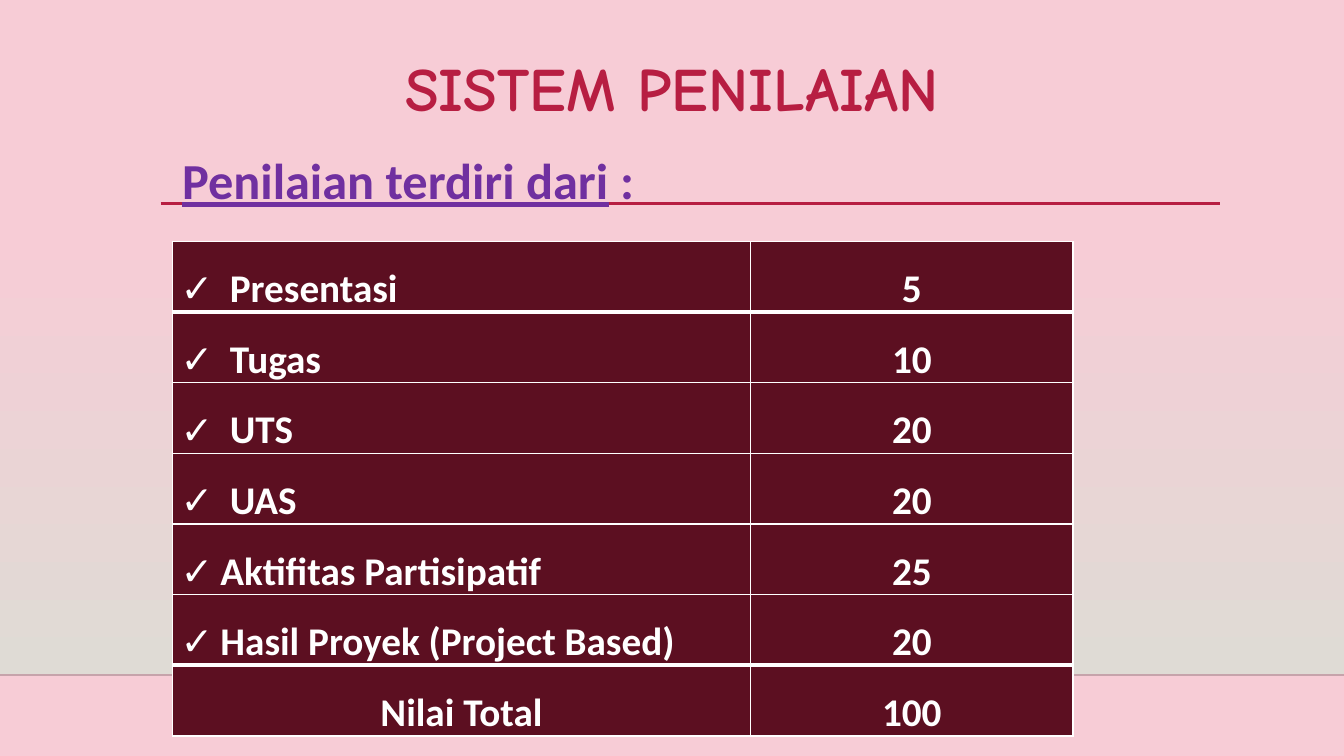
import dataclasses

import lxml.etree
import pptx
import pptx.dml.color
import pptx.enum.shapes
import pptx.enum.text
import pptx.oxml.ns
import pptx.util

PIXEL = 9525


@dataclasses.dataclass(frozen=True)
class Theme:
    """Colours, fonts and type sizes of the slide."""
    pink: str = "F7CCD6"
    grey: str = "DFDBD5"
    floor: str = "C6A3AB"
    red: str = "B71E42"
    purple: str = "7030A0"
    wine: str = "5C0F21"
    white: str = "FFFFFF"
    title_font: str = "Comic Neue"
    body_font: str = "Calibri"
    title_size: int = 44
    lead_size: int = 36
    table_size: int = 28


@dataclasses.dataclass(frozen=True)
class Box:
    """A rectangle in px."""
    left: int
    top: int
    width: int
    height: int

    def lengths(self):
        """Return the four lengths in EMU."""
        return [value * PIXEL for value in dataclasses.astuple(self)]


THEME = Theme()
PAGE = Box(0, 0, 1280, 720)
SCORES = [
    ("Presentasi", 5, 55),
    ("Tugas", 10, 55),
    ("UTS", 20, 55),
    ("UAS", 20, 55),
    ("Aktifitas Partisipatif", 25, 46),
    ("Hasil Proyek (Project Based)", 20, 46),
]


def rgb(value):
    """Turn a hex string into a colour."""
    return pptx.dml.color.RGBColor.from_string(value)


def add_text(para, text, size, color, font=THEME.body_font, align=None,
             spacing=None, underline=None):
    """Add a bold run to a paragraph and format both."""
    if align is not None:
        para.alignment = align
    if spacing is not None:
        para.line_spacing = spacing
    span = para.add_run()
    span.text = text
    span.font.size = pptx.util.Pt(size)
    span.font.name = font
    span.font.bold = True
    span.font.underline = underline
    span.font.color.rgb = rgb(color)


def add_rule(page, left, right, top, color, weight):
    """Draw a horizontal line without a shadow."""
    rule = page.shapes.add_connector(
        pptx.enum.shapes.MSO_CONNECTOR.STRAIGHT,
        left * PIXEL, top * PIXEL, right * PIXEL, top * PIXEL)
    rule.line.color.rgb = rgb(color)
    rule.line.width = pptx.util.Pt(weight)
    lxml.etree.SubElement(rule._element.spPr, pptx.oxml.ns.qn("a:effectLst"))


def add_backdrop(page, box):
    """Fill the page, and fade the given band down to its floor line."""
    page.background.fill.solid()
    page.background.fill.fore_color.rgb = rgb(THEME.pink)
    band = page.shapes.add_shape(
        pptx.enum.shapes.MSO_SHAPE.RECTANGLE, *box.lengths())
    band.shadow.inherit = False
    band.line.fill.background()
    band.fill.gradient()
    band.fill.gradient_angle = 270
    for stop, color in zip(band.fill.gradient_stops, (THEME.pink, THEME.grey)):
        stop.color.rgb = rgb(color)
    add_rule(page, box.left, box.left + box.width, box.top + box.height,
             THEME.floor, 1)


def add_title(page, box):
    """Place and format the title."""
    title = page.shapes.title
    title.left, title.top, title.width, title.height = box.lengths()
    title.text_frame.vertical_anchor = pptx.enum.text.MSO_ANCHOR.MIDDLE
    add_text(title.text_frame.paragraphs[0], "SISTEM PENILAIAN",
             THEME.title_size, THEME.red, font=THEME.title_font,
             align=pptx.enum.text.PP_ALIGN.CENTER, spacing=0.9)


def add_lead(page, box):
    """Place the lead sentence over its rule."""
    add_rule(page, box.left - 11, box.left + 998, box.top + 68, THEME.red, 2.5)
    frame = page.shapes.add_textbox(*box.lengths()).text_frame
    frame.word_wrap = True
    para = frame.paragraphs[0]
    add_text(para, "Penilaian terdiri dari", THEME.lead_size, THEME.purple,
             spacing=1.2, underline=True)
    add_text(para, " :", THEME.lead_size, THEME.purple)


def add_check(para, indent, margin=8):
    """Give a paragraph a check mark as its bullet."""
    properties = para._p.get_or_add_pPr()
    properties.set("marL", str(indent * PIXEL))
    properties.set("indent", str((margin - indent) * PIXEL))
    for tag, name, value in (("a:buFont", "typeface", THEME.body_font),
                             ("a:buChar", "char", "✓")):
        lxml.etree.SubElement(
            properties, pptx.oxml.ns.qn(tag)).set(name, value)


def style_cell(cell, top, bottom):
    """Set the margins, borders and fill of a cell."""
    cell.margin_left = cell.margin_right = 0
    cell.margin_top = cell.margin_bottom = 0
    properties = cell._tc.get_or_add_tcPr()
    for side, weight in (("L", 1), ("R", 1), ("T", top), ("B", bottom)):
        border = lxml.etree.SubElement(
            properties, pptx.oxml.ns.qn(f"a:ln{side}"),
            w=str(pptx.util.Pt(weight)))
        paint = lxml.etree.SubElement(border, pptx.oxml.ns.qn("a:solidFill"))
        lxml.etree.SubElement(
            paint, pptx.oxml.ns.qn("a:srgbClr"), val=THEME.white)
    cell.fill.solid()
    cell.fill.fore_color.rgb = rgb(THEME.wine)


def add_scores(page, box, label_width):
    """Build the table of scores and their total."""
    total = sum(score for label, score, indent in SCORES)
    rows = SCORES + [("Nilai Total", total, None)]
    last = len(rows) - 1
    table = page.shapes.add_table(len(rows), 2, *box.lengths()).table
    table.columns[0].width = label_width * PIXEL
    table.columns[1].width = (box.width - label_width) * PIXEL
    center = pptx.enum.text.PP_ALIGN.CENTER
    for index, (label, score, indent) in enumerate(rows):
        top = 3 if index in (1, last) else 1
        bottom = 3 if index in (0, last - 1) else 1
        for column, text in enumerate((label, str(score))):
            cell = table.cell(index, column)
            style_cell(cell, top, bottom)
            para = cell.text_frame.paragraphs[0]
            checked = column == 0 and indent is not None
            if checked:
                add_check(para, indent)
            add_text(para, text, THEME.table_size, THEME.white,
                     align=None if checked else center, spacing=1.5)


def main():
    """Build the deck and save it."""
    deck = pptx.Presentation()
    deck.slide_width = PAGE.width * PIXEL
    deck.slide_height = PAGE.height * PIXEL
    page = deck.slides.add_slide(deck.slide_layouts.get_by_name("Title Only"))
    add_backdrop(page, Box(0, 212, PAGE.width, 431))
    add_title(page, Box(208, 48, 864, 78))
    add_lead(page, Box(164, 126, 920, 480))
    add_scores(page, Box(164, 230, 858, 442), 551)
    deck.save("out.pptx")


if __name__ == "__main__":
    main()
